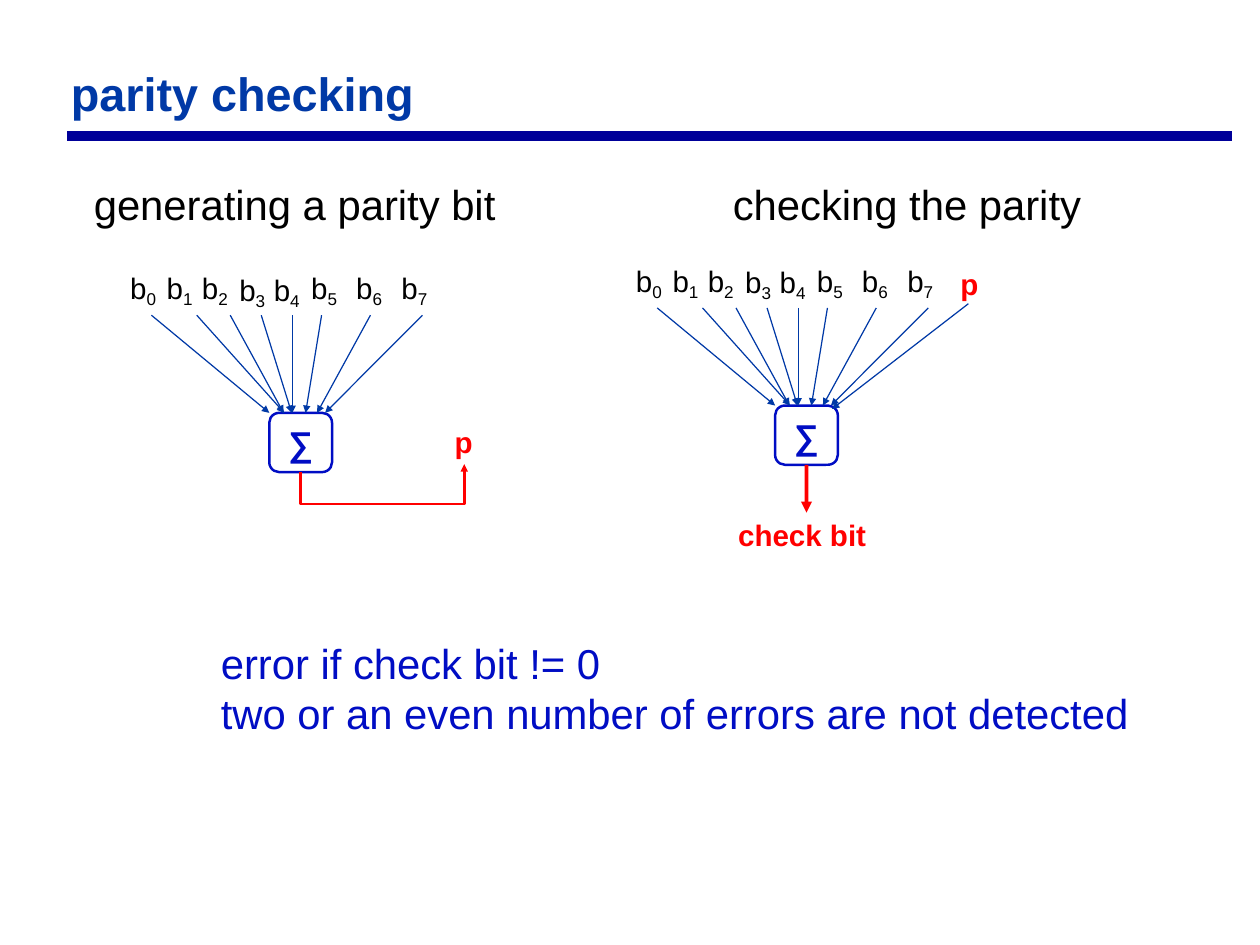
"""Build the parity checking slide with its two summing diagrams."""
from dataclasses import dataclass
from pptx import Presentation
from pptx.dml.color import RGBColor as RGB
from pptx.enum.shapes import MSO_CONNECTOR as LINK, MSO_SHAPE as SHAPE
from pptx.enum.text import MSO_ANCHOR as ANCHOR, MSO_AUTO_SIZE as FIT, PP_ALIGN as ALIGN
from pptx.oxml.ns import qn
from pptx.oxml.xmlchemy import OxmlElement as Tag
from pptx.util import Cm, Pt


@dataclass(frozen=True)
class Theme:
    face: str = "Arial"
    title: str = "0039A6"
    rule: str = "000099"
    ink: str = "000000"
    blue: str = "000DC4"
    red: str = "FF0000"
    head: int = 38
    big: int = 34
    sigma: int = 28
    label: int = 24


T = Theme()
SIZE = (36.12, 27.1)
TITLE = "parity checking"
NOTES = ["error if check bit != 0", "two or an even number of errors are not detected"]
HEADS = [("generating a parity bit", 2.51, 11.94), ("checking the parity", 20.83, 10.39)]

# Offsets from the corner of a sum box: label left, label drop, arrow start, arrow end
BITS = [
    (-4.17, 0, -3.38, 0),
    (-3.12, 0, -2.08, 0.43),
    (-2.11, 0, -1.12, 0.41),
    (-1.04, 0.04, -0.23, 0.64),
    (-0.05, 0.04, 0.66, 0.66),
    (1.02, 0, 1.5, 1.04),
    (2.31, 0, 2.9, 1.37),
    (3.61, 0, 4.39, 1.6),
]
MAKE = (7.72, 11.84)
CHECK = (22.22, 11.63)
BOX = (1.8, 1.7)
LABEL_Y, START_Y = -4.27, -2.8
PAD = 0.18


def style(run, size, color, bold=False):
    font = run.font
    font.size, font.bold, font.name = Pt(size), bold, T.face
    font.color.rgb = RGB.from_string(color)


def frame(shape, wrap=False):
    text = shape.text_frame
    text.word_wrap, text.auto_size = wrap, FIT.NONE
    text.margin_left = text.margin_right = Cm(PAD)
    text.margin_top = text.margin_bottom = Cm(PAD)
    return text


def place(shape, x, y, w, h):
    shape.left, shape.top, shape.width, shape.height = Cm(x), Cm(y), Cm(w), Cm(h)


def write(slide, words, x, y, w, h, size, color, bold=False):
    box = slide.shapes.add_textbox(Cm(x), Cm(y), Cm(w), Cm(h))
    text = frame(box)
    text.text = words
    para = text.paragraphs[0]
    style(para.runs[0], size, color, bold)
    return para


def stroke(shape, color, width, arrow=True):
    shape.line.color.rgb = RGB.from_string(color)
    shape.line.width = Pt(width)
    if arrow:
        tip = Tag("a:tailEnd")
        tip.set("type", "triangle")
        shape.element.spPr.find(qn("a:ln")).append(tip)


def link(slide, start, end, color, width, arrow=True):
    line = slide.shapes.add_connector(LINK.STRAIGHT, *map(Cm, start + end))
    stroke(line, color, width, arrow)
    line.element.spPr.append(Tag("a:effectLst"))
    return line


def draw_sum(slide, x, y):
    box = slide.shapes.add_shape(SHAPE.ROUNDED_RECTANGLE, Cm(x), Cm(y), *map(Cm, BOX))
    box.shadow.inherit = False
    box.fill.background()
    stroke(box, T.blue, 2, arrow=False)
    text = frame(box)
    text.vertical_anchor = ANCHOR.TOP
    text.text = "∑"
    text.paragraphs[0].alignment = ALIGN.CENTER
    style(text.paragraphs[0].runs[0], T.sigma, T.blue, True)
    for i, (left, drop, start, end) in enumerate(BITS):
        para = write(slide, "b", x + left, y + LABEL_Y + drop, 1.2, 1.45, T.label, T.ink)
        sub = para.add_run()
        sub.text = str(i)
        style(sub, T.label, T.ink)
        sub._r.get_or_add_rPr().set("baseline", "-20000")
        link(slide, (x + start, y + START_Y), (x + end, y), T.title, 1)
    return box


def draw_make(slide):
    x, y = MAKE
    draw_sum(slide, x, y)
    write(slide, "p", x + 5.13, y + 0.15, 0.91, 1.32, T.label, T.red, True)
    mid, low, far = x + BOX[0] / 2, y + 2.62, x + 5.59
    pen = slide.shapes.build_freeform(Cm(mid), Cm(y + BOX[1]))
    turns = [(mid, low), (far, low), (far, y + 1.47)]
    pen.add_line_segments([(Cm(a), Cm(b)) for a, b in turns], close=False)
    loop = pen.convert_to_shape()
    loop.shadow.inherit = False
    loop.fill.background()
    stroke(loop, T.red, 2)


def draw_check(slide):
    x, y = CHECK
    box = draw_sum(slide, x, y)
    write(slide, "p", x + 5.13, y - 4.17, 0.91, 1.32, T.label, T.red, True)
    link(slide, (x + 5.54, y - 2.92), (x + 1.63, y + 0.1), T.title, 1)
    mid = x + BOX[0] / 2
    out = link(slide, (mid, y + BOX[1]), (mid, y + 3.07), T.red, 3)
    out.begin_connect(box, 2)
    write(slide, "check bit", x - 1.24, y + 3.02, 4.06, 1.32, T.label, T.red, True)


def draw_text(slide):
    title, body = slide.shapes.title, slide.placeholders[1]
    place(title, 1.85, 1.6, 32.64, 2.06)
    text = frame(title, wrap=True)
    text.vertical_anchor = ANCHOR.BOTTOM
    text.text = TITLE
    text.paragraphs[0].alignment = ALIGN.LEFT
    style(text.paragraphs[0].runs[0], T.head, T.title, True)
    link(slide, (1.93, 3.89), (35.33, 3.89), T.rule, 8, arrow=False)

    for words, x, w in HEADS:
        write(slide, words, x, 4.95, w, 1.7, T.big, T.ink)

    place(body, 6.15, 18.11, 26.47, 3.07)
    text = frame(body)
    text.text = "\n".join(NOTES)
    for para in text.paragraphs:
        props = para._p.get_or_add_pPr()
        props.set("marL", "0")
        props.set("indent", "0")
        props.append(Tag("a:buNone"))
        para.space_before = Pt(0)
        style(para.runs[0], T.big, T.blue)


def main():
    deck = Presentation()
    deck.slide_width, deck.slide_height = map(Cm, SIZE)
    slide = deck.slides.add_slide(deck.slide_layouts[1])
    draw_text(slide)
    draw_make(slide)
    draw_check(slide)
    deck.save("out.pptx")


if __name__ == "__main__":
    main()
